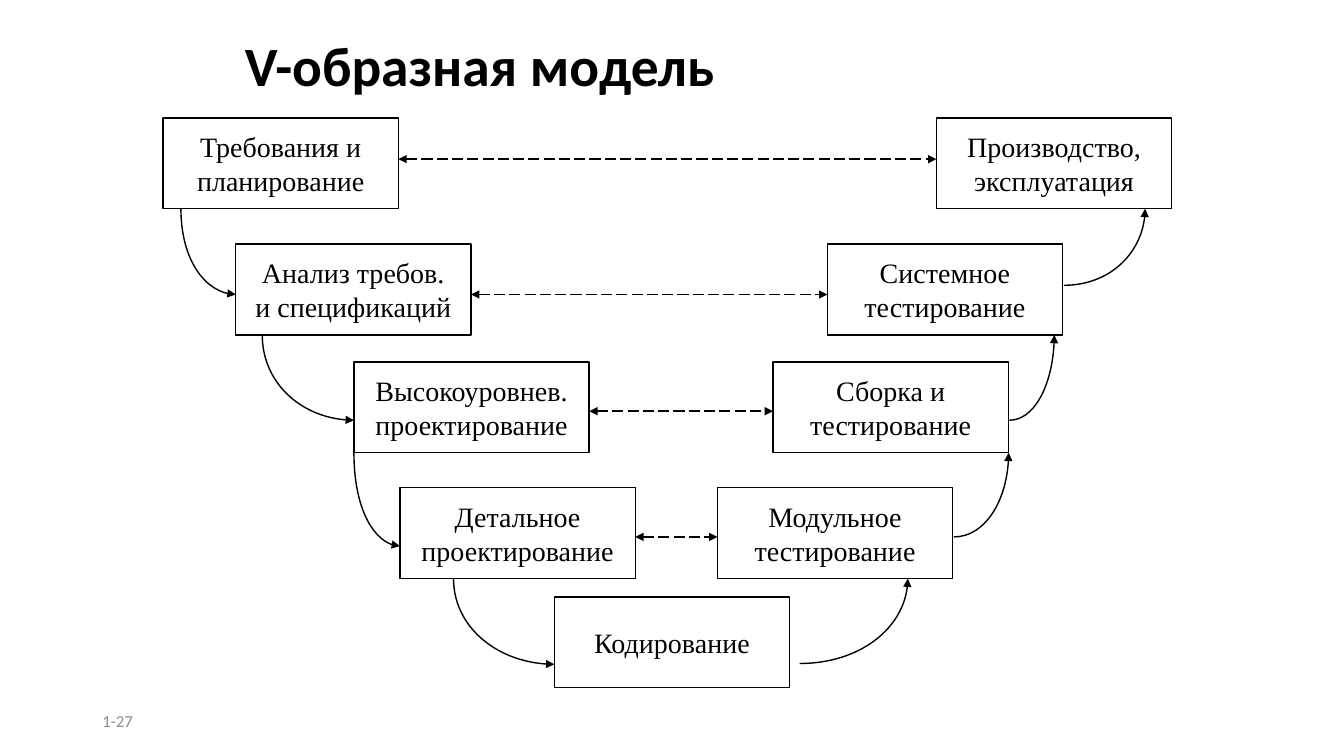
import pptx
import pptx.dml.color
import pptx.enum.dml
import pptx.enum.shapes
import pptx.enum.text
import pptx.oxml.ns
import pptx.oxml.xmlchemy
import pptx.util
from dataclasses import dataclass

Cm, Pt = pptx.util.Cm, pptx.util.Pt
RGB = pptx.dml.color.RGBColor
ALIGN = pptx.enum.text.PP_ALIGN
qn = pptx.oxml.ns.qn
node = pptx.oxml.xmlchemy.OxmlElement


@dataclass(frozen=True)
class Theme:
    ink: RGB = RGB(0, 0, 0)
    paper: RGB = RGB(255, 255, 255)
    mute: RGB = RGB(0x8C, 0x8C, 0x8C)
    sans: str = "Calibri"
    serif: str = "Times New Roman"
    head: float = 39.6
    body: float = 20
    foot: float = 12
    line: float = 1


THEME = Theme()
WIDE, TALL = 5.93, 2.29  # stage size, cm

# Left branch going down: left, top, label, arrow start along the stage,
# arrow end below the top of the next stage
DOWN = [
    (4.11, 2.97, "Требования и\nпланирование", 0.45, 1.27),
    (5.94, 6.15, "Анализ требов.\nи спецификаций", 0.67, 1.47),
    (8.92, 9.12, "Высокоуровнев.\nпроектирование", 0, 1.47),
    (10.08, 12.29, "Детальное\nпроектирование", 1.35, 1.7),
]
CODE = (13.97, 15.04, "Кодирование")
# Right branch: left, label, arrow tip along the stage,
# arrow start below the top of the stage under it, gap beside that stage
UP = [
    (23.6, "Производство,\nэксплуатация", 5.26, 1.04, 0.03),
    (20.85, "Системное\nтестирование", 5.72, 1.47, 0.03),
    (19.48, "Сборка и\nтестирование", 5.94, 1.24, 0.03),
    (18.08, "Модульное\nтестирование", 4.8, 1.68, 0.25),
]
LINKS = [1.04, 1.27, 1.24, 1.24]  # dashed line below the top of each row


def write(shape, text, size, font, color, bold=False, align=ALIGN.LEFT,
          wrap=True, space=None):
    frame = shape.text_frame
    frame.word_wrap = wrap
    frame.vertical_anchor = pptx.enum.text.MSO_ANCHOR.MIDDLE
    frame.text = text
    for para in frame.paragraphs:
        para.alignment = align
        para.line_spacing = space
        face = para.runs[0].font
        face.size, face.name, face.bold = Pt(size), font, bold
        face.color.rgb = color


def label(slide, box, text, **form):
    write(slide.shapes.add_textbox(*map(Cm, box)), text, **form)


def stage(slide, left, top, text):
    shape = slide.shapes.add_shape(
        pptx.enum.shapes.MSO_SHAPE.RECTANGLE,
        Cm(left), Cm(top), Cm(WIDE), Cm(TALL))
    shape.shadow.inherit = False
    shape.fill.solid()
    shape.fill.fore_color.rgb = THEME.paper
    stroke(shape)
    write(shape, text, size=THEME.body, font=THEME.serif, color=THEME.ink,
          align=ALIGN.CENTER, wrap=False)


def stroke(shape, *ends):
    shape.line.color.rgb = THEME.ink
    shape.line.width = Pt(THEME.line)
    for end in ends:
        tip = node("a:" + end)
        tip.set("type", "triangle")
        shape._element.spPr.find(qn("a:ln")).append(tip)


def link(slide, left, right, y):
    line = slide.shapes.add_connector(
        pptx.enum.shapes.MSO_CONNECTOR.STRAIGHT,
        Cm(left), Cm(y), Cm(right), Cm(y))
    line.line.dash_style = pptx.enum.dml.MSO_LINE.LONG_DASH
    stroke(line, "headEnd", "tailEnd")
    line._element.spPr.append(node("a:effectLst"))


def curve(slide, high, low, end):
    """Quarter ellipse, upright at its high point and level at its low one."""
    (x, y), (u, v) = high, low
    bend = 0.55
    spots = [(x, y + bend * (v - y)), (u - bend * (u - x), v), low]
    form = slide.shapes.build_freeform(Cm(x), Cm(y))
    form.add_line_segments([(Cm(a), Cm(b)) for a, b in spots], close=False)
    shape = form.convert_to_shape()
    shape.shadow.inherit = False
    shape.fill.background()
    stroke(shape, end)
    # Turn the three segments into one Bezier segment
    steps = list(shape._element.iter(qn("a:lnTo")))
    arc = node("a:cubicBezTo")
    steps[0].addprevious(arc)
    for step in steps:
        arc.append(step[0])
        step.getparent().remove(step)


def model(slide):
    # Stages
    tops = [row[1] for row in DOWN] + [CODE[1]]
    for left, top, text, *_ in DOWN + [CODE]:
        stage(slide, left, top, text)
    for (left, text, *_), top in zip(UP, tops):
        stage(slide, left, top, text)
    # Dashed links across each row
    for low, high, top, drop in zip(DOWN, UP, tops, LINKS):
        link(slide, low[0] + WIDE, high[0], top + drop)
    # Arrows down the left branch
    for row, after in zip(DOWN, DOWN[1:] + [CODE]):
        left, top, _, start, drop = row
        curve(slide, (left + start, top + TALL),
              (after[0], after[1] + drop), "tailEnd")
    # Arrows up the right branch
    for i, (left, _, tip, drop, gap) in enumerate(UP):
        under = (UP + [CODE])[i + 1][0]
        curve(slide, (left + tip, tops[i] + TALL),
              (under + WIDE + gap, tops[i + 1] + drop), "headEnd")


def main():
    deck = pptx.Presentation()
    deck.slide_width, deck.slide_height = Cm(33.87), Cm(19.05)
    slide = deck.slides.add_slide(deck.slide_layouts[6])
    # Slide number and title
    label(slide, (2.33, 17.66, 7.62, 1.01), "1-27",
          size=THEME.foot, font=THEME.sans, color=THEME.mute)
    label(slide, (5.92, 0.89, 21.59, 1.7), "V-образная модель",
          size=THEME.head, font=THEME.sans, color=THEME.ink, bold=True,
          space=0.9)
    model(slide)
    deck.save("out.pptx")


if __name__ == "__main__":
    main()
